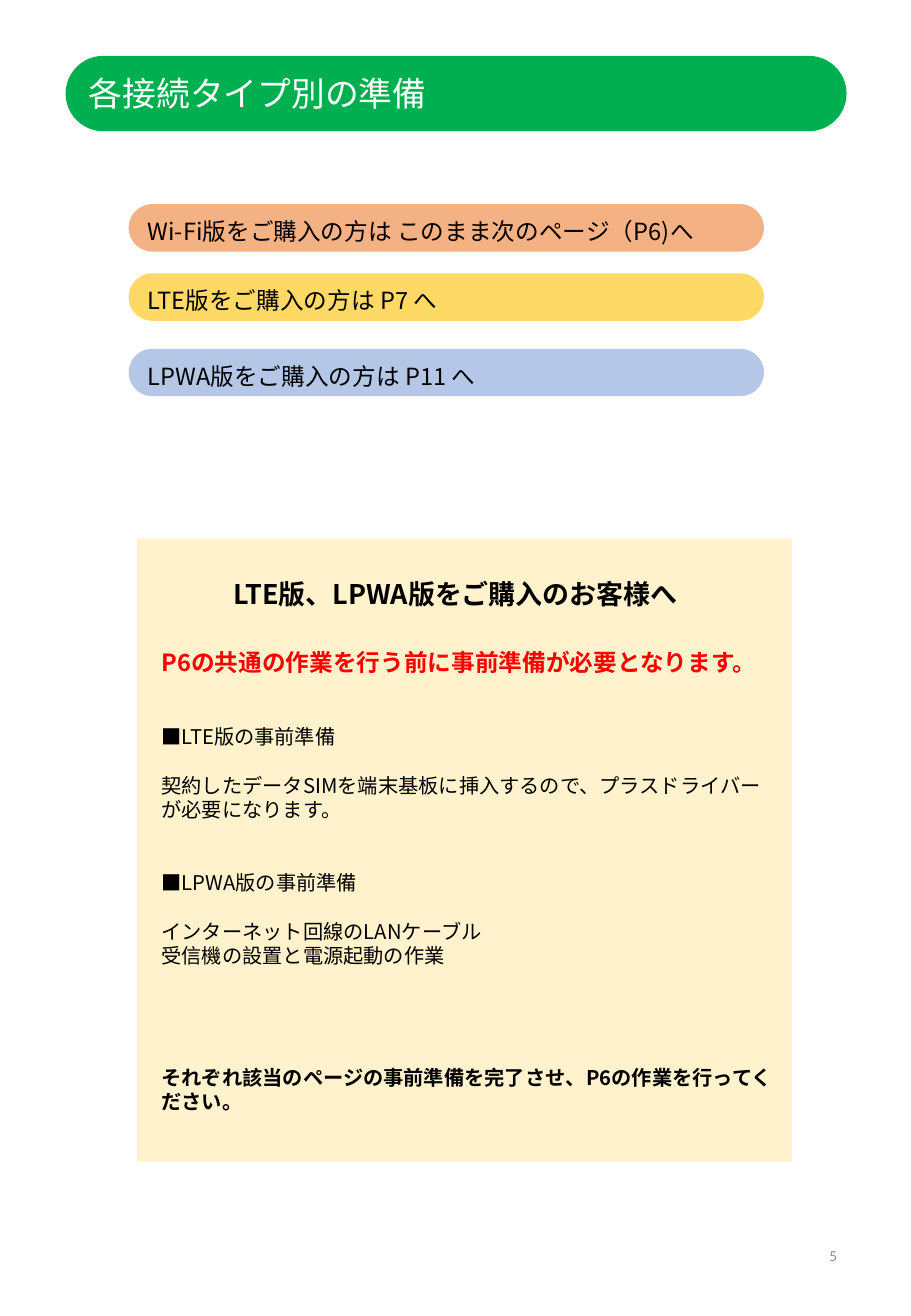
"""Build the page that guides each connection type to its preparation steps."""
import pptx
import pptx.dml.color
import pptx.enum.shapes
import pptx.enum.text
import pptx.oxml.ns
import pptx.util
from lxml import etree


class Theme:
    font, plain = "Noto Sans CJK JP", "Calibri"
    head, lead, item, text, small = 20, 16, 14, 12, 9
    white, black, red, gray = "FFFFFF", "000000", "FF0000", "8C8C8C"
    green, orange, gold, blue, cream = "00B050", "F4B183", "FFD966", "B4C7E7", "FFF2CC"
    line = 1.2


CELL = 0.1
COLS, ROWS = 75, 108.3
TITLE = "各接続タイプ別の準備"
PILLS = [
    (16.8, Theme.orange, "Wi-Fi版をご購入の方は このまま次のページ（P6)へ"),
    (22.5, Theme.gold, "LTE版をご購入の方は P7 へ"),
    (28.7, Theme.blue, "LPWA版をご購入の方は P11 へ"),
]
LEAD = "LTE版、LPWA版をご購入のお客様へ"
BODY = [
    (0, Theme.item, Theme.red, True, "P6の共通の作業を行う前に事前準備が必要となります。"),
    (2, Theme.text, Theme.black, False, "■LTE版の事前準備"),
    (1, Theme.text, Theme.black, False,
     "契約したデータSIMを端末基板に挿入するので、プラスドライバーが必要になります。"),
    (2, Theme.text, Theme.black, False, "■LPWA版の事前準備"),
    (1, Theme.text, Theme.black, False, "インターネット回線のLANケーブル"),
    (0, Theme.text, Theme.black, False, "受信機の設置と電源起動の作業"),
    (4, Theme.text, Theme.black, True,
     "それぞれ該当のページの事前準備を完了させ、P6の作業を行ってください。"),
]
PAGE = "5"
ALIGN = pptx.enum.text.PP_ALIGN
ANCHOR = pptx.enum.text.MSO_ANCHOR
KIND = pptx.enum.shapes.MSO_SHAPE


def grid(*cells):
    return [pptx.util.Inches(cell * CELL) for cell in cells]


def color(code):
    return pptx.dml.color.RGBColor.from_string(code)


def place(shape, *cells):
    shape.left, shape.top, shape.width, shape.height = grid(*cells)


def style(para, size, tint, bold=False, align=ALIGN.LEFT, face=Theme.font, gap=0):
    para.alignment = align
    para.line_spacing = pptx.util.Pt(size * Theme.line)
    para.space_before = pptx.util.Pt(gap * Theme.text * Theme.line)
    para.space_after = pptx.util.Pt(0)
    for run in para.runs:
        font = run.font
        font.size, font.bold, font.name = pptx.util.Pt(size), bold, face
        font.color.rgb = color(tint)
        east = etree.SubElement(font._element, pptx.oxml.ns.qn("a:ea"))
        east.set("typeface", face)


def frame(shape, anchor=ANCHOR.TOP):
    box = shape.text_frame
    box.word_wrap = True
    box.auto_size = pptx.enum.text.MSO_AUTO_SIZE.NONE
    box.vertical_anchor = anchor
    return box


def write(shape, text, size, tint, anchor=ANCHOR.TOP, **look):
    box = frame(shape, anchor)
    box.text = text
    style(box.paragraphs[0], size, tint, **look)


def panel(slide, kind, fill, *cells):
    shape = slide.shapes.add_shape(kind, *grid(*cells))
    shape.shadow.inherit = False
    shape.fill.solid()
    shape.fill.fore_color.rgb = color(fill)
    shape.line.fill.background()
    if kind == KIND.ROUNDED_RECTANGLE:
        shape.adjustments[0] = 0.5
    slide.shapes._spTree.insert(2, shape._element)
    return shape


def fill_body(shape):
    box = frame(shape)
    box.text = "\n".join(row[-1] for row in BODY)
    for para, (gap, size, tint, bold, _) in zip(box.paragraphs, BODY):
        props = para._p.get_or_add_pPr()
        props.set("marL", "0")
        props.set("indent", "0")
        etree.SubElement(props, pptx.oxml.ns.qn("a:buNone"))
        style(para, size, tint, bold, gap=gap)


def main():
    deck = pptx.Presentation()
    deck.slide_width, deck.slide_height = grid(COLS, ROWS)
    slide = deck.slides.add_slide(deck.slide_layouts[1])
    title, body = slide.placeholders

    panel(slide, KIND.ROUNDED_RECTANGLE, Theme.green, 5.4, 4.6, 64.3, 6.2)
    place(title, 6.3, 5.5, 62.5, 4.4)
    write(title, TITLE, Theme.head, Theme.white)

    for top, fill, text in PILLS:
        pill = panel(slide, KIND.ROUNDED_RECTANGLE, fill, 10.6, top, 52.3, 3.9)
        write(pill, text, Theme.item, Theme.black)

    panel(slide, KIND.RECTANGLE, Theme.cream, 11.3, 44.3, 53.9, 51.3)
    lead = slide.shapes.add_textbox(*grid(13.1, 47, 48.8, 3.7))
    write(lead, LEAD, Theme.lead, Theme.black, bold=True, align=ALIGN.CENTER)
    place(body, 12.3, 52.8, 52.9, 40.4)
    fill_body(body)

    page = slide.shapes.add_textbox(*grid(53, 100.4, 16.9, 5.8))
    write(page, PAGE, Theme.small, Theme.gray, ANCHOR.MIDDLE,
          align=ALIGN.RIGHT, face=Theme.plain)
    deck.save("out.pptx")


if __name__ == "__main__":
    main()
